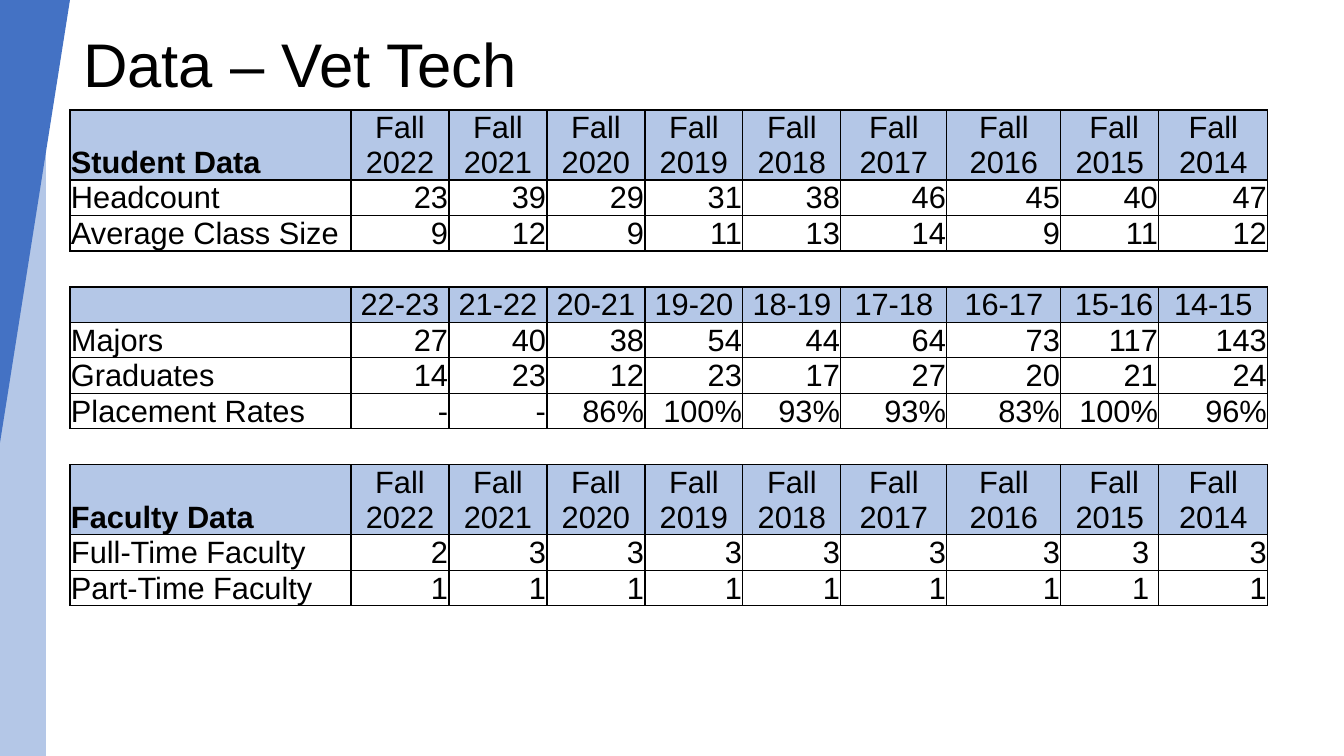
from lxml.etree import SubElement
from pptx import Presentation
from pptx.dml.color import RGBColor
from pptx.enum.shapes import MSO_SHAPE
from pptx.enum.text import MSO_ANCHOR, PP_ALIGN
from pptx.oxml.ns import qn
from pptx.util import Emu, Pt

BLACK = RGBColor(0x00, 0x00, 0x00)
WHITE = RGBColor(0xFF, 0xFF, 0xFF)
BLUE = RGBColor(0x44, 0x72, 0xC4)
PALE_BLUE = RGBColor(0xB4, 0xC7, 0xE7)
FONT = "Arial"

HEADER, DATA, SPACER = "header", "data", "spacer"
FALLS = "Fall 2022|Fall 2021|Fall 2020|Fall 2019|Fall 2018|Fall 2017|Fall 2016| Fall 2015|Fall 2014"
SCHOOL_YEARS = "22-23|21-22|20-21|19-20|18-19|17-18|16-17| 15-16|14-15"
ROWS = [
    (HEADER, 70, "Student Data", FALLS),
    (DATA, 35, "Headcount", "23|39|29|31|38|46|45|40|47"),
    (DATA, 35, "Average Class Size", "9|12|9|11|13|14|9|11|12"),
    (SPACER, 36, "", "||||||||"),
    (HEADER, 35, "", SCHOOL_YEARS),
    (DATA, 35, "Majors", "27|40|38|54|44|64|73|117|143"),
    (DATA, 35, "Graduates", "14|23|12|23|17|27|20|21|24"),
    (DATA, 35, "Placement Rates", "-|-|86%|100%|93%|93%|83%|100%|96%"),
    (SPACER, 36, "", "||||||||"),
    (HEADER, 70, "Faculty Data", FALLS),
    (DATA, 35, "Full-Time Faculty", "2|3|3|3|3|3|3|3 |3"),
    (DATA, 35, "Part-Time Faculty", "1|1|1|1|1|1|1|1 |1"),
]
COLUMN_WIDTHS = [281, 98, 98, 98, 98, 98, 106, 114, 98, 109]


def px(length):
    """Turn a length in px into EMU."""
    return Emu(round(length * 914400 / 100.8))


def add_span(para, text, size, bold=False):
    """Add one formatted run to a paragraph."""
    span = para.add_run()
    span.text = text
    span.font.name = FONT
    span.font.size = Pt(size)
    span.font.bold = bold
    span.font.color.rgb = BLACK


def set_title(slide, text):
    """Place and fill the title placeholder."""
    title = slide.shapes.title
    title.left, title.top, title.width, title.height = px(73), px(25), px(710), px(85)
    title.text_frame.vertical_anchor = MSO_ANCHOR.MIDDLE
    para = title.text_frame.paragraphs[0]
    para.alignment = PP_ALIGN.LEFT
    para.line_spacing = 0.9
    add_span(para, text, 44)


def add_plain_shape(group, kind, width, height, color):
    """Add a flat borderless shape in the top left corner."""
    shape = group.shapes.add_shape(kind, 0, 0, px(width), px(height))
    shape.shadow.inherit = False
    shape.fill.solid()
    shape.fill.fore_color.rgb = color
    shape.line.fill.background()
    return shape


def add_side_band(slide):
    """Add the pale strip and the blue wedge on the left edge."""
    band = slide.shapes.add_group_shape()
    add_plain_shape(band, MSO_SHAPE.RECTANGLE, 46, 756, PALE_BLUE)
    wedge = add_plain_shape(band, MSO_SHAPE.ISOSCELES_TRIANGLE, 70, 443, BLUE)
    wedge.adjustments[0] = 0
    wedge.element.spPr.get_or_add_xfrm().set("flipV", "1")


def set_borders(cell, visible_sides):
    """Draw black lines on the visible sides and none on the others."""
    properties = cell._tc.get_or_add_tcPr()
    for side in "LRTB":
        line = SubElement(properties, qn(f"a:ln{side}"), w=str(Pt(1)))
        if side in visible_sides:
            fill = SubElement(line, qn("a:solidFill"))
            SubElement(fill, qn("a:srgbClr"), val=str(BLACK))
        else:
            SubElement(line, qn("a:noFill"))


def fill_cell(cell, kind, text, is_label):
    """Format one table cell by the kind of its row."""
    cell.margin_left = cell.margin_right = cell.margin_top = px(1)
    cell.margin_bottom = 0
    cell.vertical_anchor = MSO_ANCHOR.BOTTOM
    set_borders(cell, "TB" if kind == SPACER else "LRTB")
    if kind == SPACER:
        cell.fill.background()
    else:
        cell.fill.solid()
        cell.fill.fore_color.rgb = PALE_BLUE if kind == HEADER else WHITE
    para = cell.text_frame.paragraphs[0]
    if is_label:
        para.alignment = PP_ALIGN.LEFT
    else:
        para.alignment = PP_ALIGN.CENTER if kind == HEADER else PP_ALIGN.RIGHT
    if text:
        add_span(para, text, 22, bold=is_label and kind == HEADER)


def add_data_table(slide):
    """Add the table of student and faculty data."""
    height = sum(row[1] for row in ROWS)
    frame = slide.shapes.add_table(len(ROWS), len(COLUMN_WIDTHS), px(70), px(110),
                                   px(sum(COLUMN_WIDTHS)), px(height))
    table = frame.table
    table.first_row = table.horz_banding = False
    for column, width in zip(table.columns, COLUMN_WIDTHS):
        column.width = px(width)
    for row, (kind, row_height, label, values) in zip(table.rows, ROWS):
        row.height = px(row_height)
        for index, text in enumerate([label, *values.split("|")]):
            fill_cell(row.cells[index], kind, text, index == 0)


def main():
    """Build the slide and save the deck."""
    deck = Presentation()
    deck.slide_width, deck.slide_height = px(1344), px(756)
    slide = deck.slides.add_slide(deck.slide_layouts[5])
    set_title(slide, "Data – Vet Tech")
    add_data_table(slide)
    add_side_band(slide)
    deck.save("out.pptx")


if __name__ == "__main__":
    main()
